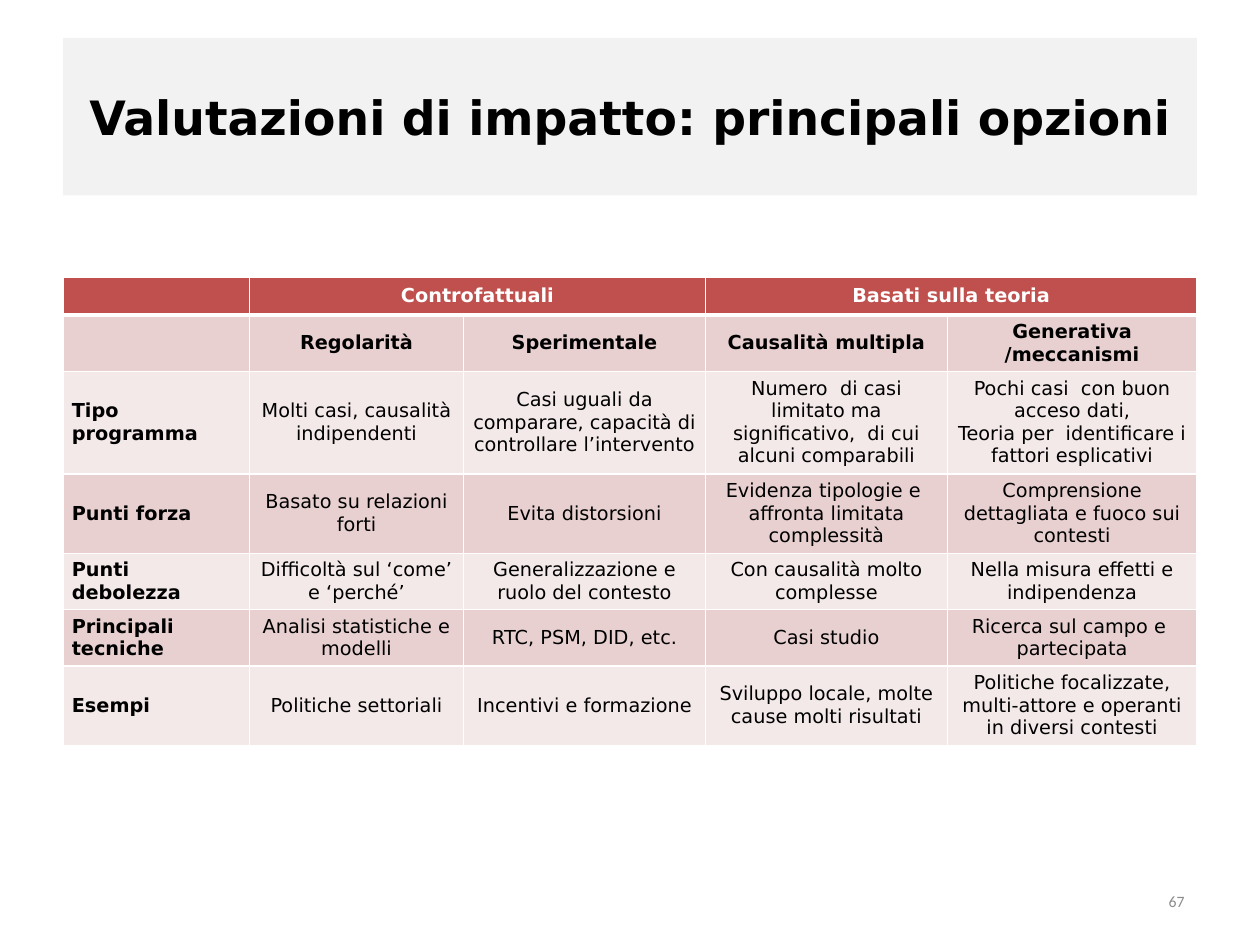
from lxml import etree
from pptx import Presentation
from pptx import util as u
from pptx.dml.color import RGBColor
from pptx.enum import text
from pptx.oxml.ns import qn

COLORS = {
    "black": "000000", "white": "FFFFFF", "band": "F2F2F2", "number": "8C8C8C",
    "header": "C0504D", "dark_row": "E8D0D0", "light_row": "F4E9E9",
}
CENTER, LEFT, RIGHT = text.PP_ALIGN.CENTER, text.PP_ALIGN.LEFT, text.PP_ALIGN.RIGHT
MIDDLE = text.MSO_ANCHOR.MIDDLE
CELL_PT = 11

COLUMNS = [1.48, 1.7, 1.92, 1.92, 1.98]
HEIGHTS = [0.3, 0.42, 0.78, 0.6, 0.42, 0.42, 0.6]
OPTIONS = [
    ["", "Controfattuali", "", "Basati sulla teoria", ""],
    ["", "Regolarità", "Sperimentale", "Causalità multipla", "Generativa /meccanismi"],
    ["Tipo programma", "Molti casi, causalità indipendenti",
     "Casi uguali da comparare, capacità di controllare l’intervento",
     "Numero  di casi limitato ma significativo,  di cui alcuni comparabili",
     "Pochi casi  con buon acceso dati,\nTeoria per  identificare i fattori esplicativi"],
    ["Punti forza", "Basato su relazioni forti", "Evita distorsioni",
     "Evidenza tipologie e  affronta limitata complessità",
     "Comprensione dettagliata e fuoco sui contesti"],
    ["Punti debolezza", "Difficoltà sul ‘come’ e ‘perché’",
     "Generalizzazione e ruolo del contesto", "Con causalità molto complesse",
     "Nella misura effetti e indipendenza"],
    ["Principali tecniche", "Analisi statistiche e modelli", "RTC, PSM, DID, etc.",
     "Casi studio", "Ricerca sul campo e  partecipata"],
    ["Esempi", "Politiche settoriali", "Incentivi e formazione",
     "Sviluppo locale, molte cause molti risultati",
     "Politiche focalizzate, multi-attore e operanti in diversi contesti"],
]


class SlideBuilder:
    """Holds the style and the current slide."""

    def __init__(self, slide, font="DejaVu Sans"):
        self.slide = slide
        self.font = font

    def color(self, name):
        return RGBColor.from_string(COLORS[name])

    def paint(self, target, name):
        target.fill.solid()
        target.fill.fore_color.rgb = self.color(name)

    def put_text(self, frame, words, color, align=CENTER, **style):
        frame.text = words
        style = {"name": self.font, **style}
        for paragraph in frame.paragraphs:
            paragraph.alignment = align
            for run in paragraph.runs:
                for attribute, value in style.items():
                    setattr(run.font, attribute, value)
                run.font.color.rgb = self.color(color)

    def title(self, words, left, top, width, height):
        title = self.slide.shapes.title
        box = {"left": left, "top": top, "width": width, "height": height}
        for attribute, value in box.items():
            setattr(title, attribute, u.Inches(value))
        self.paint(title, "band")
        frame = title.text_frame
        frame.auto_size = text.MSO_AUTO_SIZE.NONE
        frame.vertical_anchor = MIDDLE
        self.put_text(frame, words, "black", size=u.Pt(27), bold=True)

    def page_number(self, number, *box):
        frame = self.slide.shapes.add_textbox(*map(u.Inches, box)).text_frame
        frame.word_wrap = True
        frame.vertical_anchor = MIDDLE
        self.put_text(frame, number, "number", RIGHT, name="Calibri", size=u.Pt(9))

    def borders(self, cell, bottom):
        properties = cell._tc.get_or_add_tcPr()
        for side, points in (("L", 1), ("R", 1), ("T", 1), ("B", bottom)):
            line = etree.SubElement(properties, qn(f"a:ln{side}"), w=str(u.Pt(points)))
            fill = etree.SubElement(line, qn("a:solidFill"))
            etree.SubElement(fill, qn("a:srgbClr"), val=COLORS["white"])

    def cell(self, cell, words, row, column):
        header = row == 0
        layout = {
            "vertical_anchor": MIDDLE,
            "margin_left": u.Inches(0.07), "margin_right": u.Inches(0.07),
            "margin_top": u.Inches(0.04), "margin_bottom": u.Inches(0.04),
        }
        for attribute, value in layout.items():
            setattr(cell, attribute, value)
        # Borders must come before the fill in the cell properties
        self.borders(cell, 3 if header else 1)
        self.paint(cell, "header" if header else "dark_row" if row % 2 else "light_row")
        if words:
            self.put_text(cell.text_frame, words, "white" if header else "black",
                          CENTER if column else LEFT,
                          size=u.Pt(CELL_PT), bold=row < 2 or column == 0)
        else:
            # Keep empty cells from stretching their row
            etree.SubElement(cell.text_frame.paragraphs[0]._p, qn("a:endParaRPr"),
                             sz=str(CELL_PT * 100))

    def table(self, rows, widths, heights, left, top):
        box = (left, top, sum(widths), sum(heights))
        table = self.slide.shapes.add_table(
            len(rows), len(widths), *map(u.Inches, box)).table
        for column, width in zip(table.columns, widths):
            column.width = u.Inches(width)
        for row, height in zip(table.rows, heights):
            row.height = u.Inches(height)
        for r, row in enumerate(rows):
            for c, words in enumerate(row):
                self.cell(table.cell(r, c), words, r, c)
        # Each family of methods spans two columns
        for first in (1, 3):
            table.cell(0, first).merge(table.cell(0, first + 1))


def main():
    deck = Presentation()
    deck.slide_width, deck.slide_height = u.Inches(10), u.Inches(7.5)
    builder = SlideBuilder(deck.slides.add_slide(deck.slide_layouts[5]))

    # Title band
    builder.title("Valutazioni di impatto: principali opzioni", 0.5, 0.3, 9, 1.25)
    # Page number
    builder.page_number("67", 7.17, 6.95, 2.33, 0.4)
    # Comparison of evaluation options
    builder.table(OPTIONS, COLUMNS, HEIGHTS, 0.5, 2.2)

    deck.save("out.pptx")


if __name__ == "__main__":
    main()
